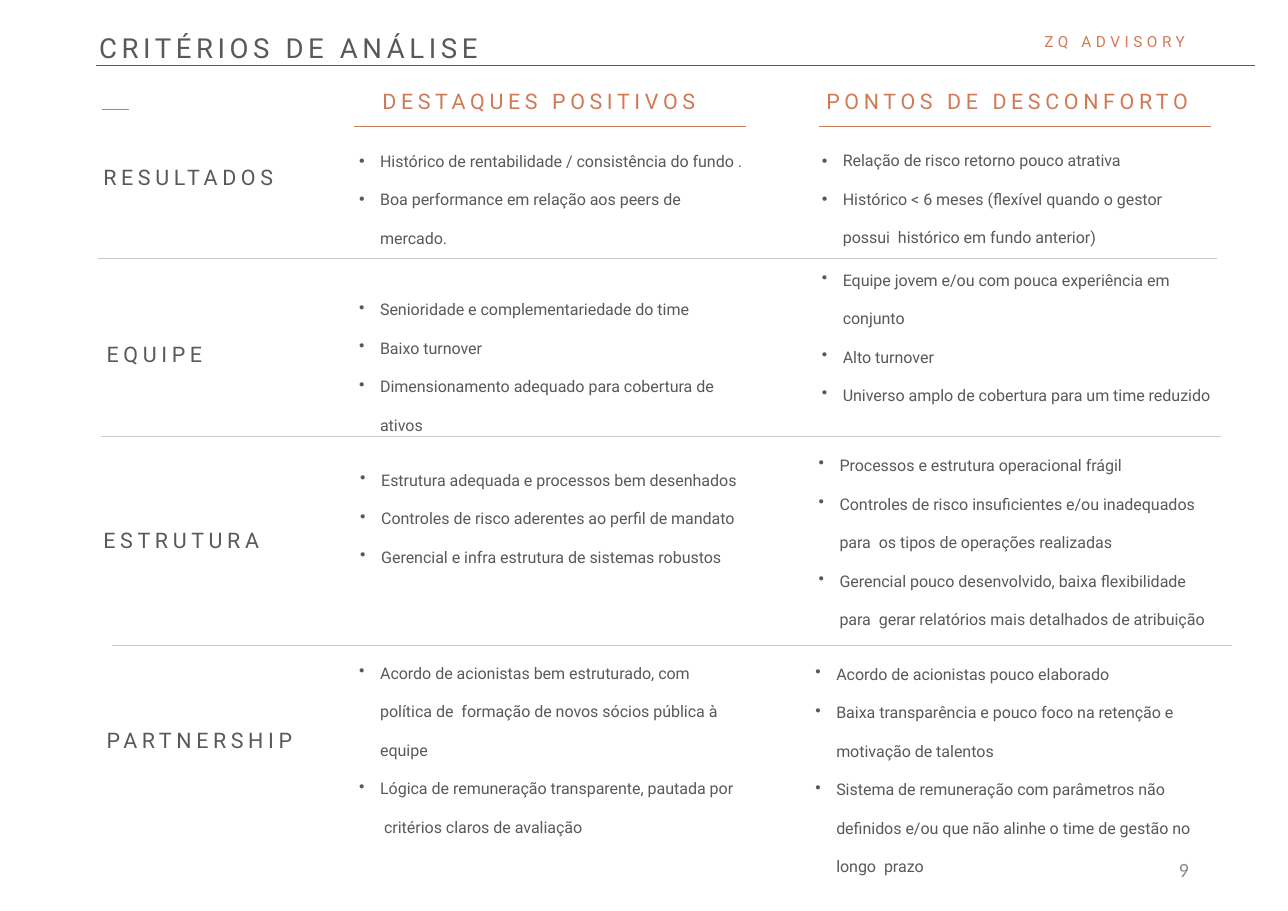
"""Build the slide of analysis criteria on a grid of tenth-of-an-inch cells."""
from dataclasses import dataclass
from typing import Optional

from lxml.etree import SubElement
from pptx import Presentation
from pptx.dml.color import RGBColor
from pptx.enum.shapes import MSO_CONNECTOR
from pptx.enum.text import MSO_ANCHOR, MSO_AUTO_SIZE, PP_ALIGN
from pptx.oxml.ns import qn
from pptx.slide import Slide
from pptx.text.text import TextFrame
from pptx.util import Emu, Inches, Pt

CELL = Inches(0.1)
COLS, ROWS = 116.9, 82.7
INDENT = 1.9
LABEL_ROWS = 3.4

GREY = RGBColor(0x58, 0x59, 0x5B)
ORANGE = RGBColor(0xD1, 0x79, 0x55)
COPPER = RGBColor(0xC5, 0x7D, 0x5C)
SILVER = RGBColor(0xC8, 0xC9, 0xC9)
PAGE_GREY = RGBColor(0x8C, 0x8C, 0x8C)


@dataclass(frozen=True)
class Style:
    """Look of a text and of its frame."""
    size: float
    color: RGBColor
    tracking: int = 0
    leading: float = 1.0
    font: str = "Roboto"
    bullet: bool = False
    inset: bool = False
    wrap: bool = True
    grow: bool = False
    anchor: MSO_ANCHOR = MSO_ANCHOR.TOP
    align: PP_ALIGN = PP_ALIGN.LEFT


@dataclass(frozen=True)
class Block:
    """Text placed on the grid, in a placeholder when a slot is given."""
    col: float
    row: float
    cols: float
    rows: float
    lines: tuple[str, ...]
    style: Style
    slot: Optional[int] = None


@dataclass(frozen=True)
class Rule:
    """Horizontal line on the grid."""
    col: float
    row: float
    cols: float
    color: RGBColor
    width: float = 0.5


TITLE = Style(18, GREY, 300, 2.0, grow=True)
BRAND = Style(10, ORANGE, 300, 2.0, grow=True)
HEADING = Style(14, ORANGE, 300, inset=True, wrap=False, grow=True)
LABEL = Style(14, GREY, 300, inset=True, wrap=False, grow=True)
LIST = Style(10.5, GREY, leading=2.0, bullet=True, anchor=MSO_ANCHOR.MIDDLE)
PAGE = Style(13.2, PAGE_GREY, font="Calibri", inset=True,
             anchor=MSO_ANCHOR.MIDDLE, align=PP_ALIGN.RIGHT)

BLOCKS = (
    Block(9, -0.2, 76.8, 5.1, ("CRITÉRIOS DE ANÁLISE",), TITLE, 0),
    Block(94.8, 1.3, 14.6, 3.4, ("ZQ ADVISORY",), BRAND),
    Block(33.7, 7.5, 33.1, LABEL_ROWS, ("DESTAQUES POSITIVOS",), HEADING, 1),
    Block(74, 7.5, 38.1, LABEL_ROWS, ("PONTOS DE DESCONFORTO",), HEADING, 3),
    Block(8.4, 14.4, 19.3, LABEL_ROWS, ("RESULTADOS",), LABEL),
    Block(32.6, 14.4, 35.1, 5.6, (
        "Histórico de rentabilidade / consistência do fundo .",
        "Boa performance em relação aos peers de mercado.",
    ), LIST, 2),
    Block(74.6, 13.3, 34.3, 7.8, (
        "Relação de risco retorno pouco atrativa",
        "Histórico < 6 meses (flexível quando o gestor possui  histórico em fundo anterior)",
    ), LIST, 4),
    Block(8.7, 30.5, 12, LABEL_ROWS, ("EQUIPE",), LABEL),
    Block(32.6, 28, 33.7, 8.9, (
        "Senioridade e complementariedade do time",
        "Baixo turnover",
        "Dimensionamento adequado para cobertura de ativos",
    ), LIST),
    Block(74.6, 25.3, 37.3, 8.9, (
        "Equipe jovem e/ou com pouca experiência em conjunto",
        "Alto turnover",
        "Universo amplo de cobertura para um time reduzido",
    ), LIST),
    Block(8.4, 47.4, 17.8, LABEL_ROWS, ("ESTRUTURA",), LABEL),
    Block(32.7, 41.9, 35, 8.6, (
        "Estrutura adequada e processos bem desenhados",
        "Controles de risco aderentes ao perﬁl de mandato",
        "Gerencial e infra estrutura de sistemas robustos",
    ), LIST),
    Block(74.3, 41, 35.6, 14.7, (
        "Processos e estrutura operacional frágil",
        "Controles de risco insuﬁcientes e/ou inadequados para  os tipos de operações realizadas",
        "Gerencial pouco desenvolvido, baixa flexibilidade para  gerar relatórios mais "
        "detalhados de atribuição",
    ), LIST),
    Block(8.7, 65.5, 20.5, LABEL_ROWS, ("PARTNERSHIP",), LABEL),
    Block(32.6, 62, 34.2, 10.4, (
        "Acordo de acionistas bem estruturado, com política de  formação de novos sócios "
        "pública à equipe",
        "Lógica de remuneração transparente, pautada por  critérios claros de avaliação",
    ), LIST),
    Block(74, 62.5, 36.8, 13.1, (
        "Acordo de acionistas pouco elaborado",
        "Baixa transparência e pouco foco na retenção e  motivação de talentos",
        "Sistema de remuneração com parâmetros não  deﬁnidos e/ou que não alinhe o time de "
        "gestão no longo  prazo",
    ), LIST),
    Block(82.6, 76.7, 26.3, 4.4, ("9",), PAGE),
)

RULES = (
    Rule(8.7, 5.9, 105.2, GREY),
    Rule(9.3, 9.9, 2.4, COPPER),
    Rule(32.1, 11.5, 35.6, COPPER, 1),
    Rule(74.3, 11.5, 35.6, COPPER, 1),
    Rule(8.9, 23.5, 101.6, SILVER),
    Rule(9.2, 39.6, 101.6, SILVER),
    Rule(10.2, 58.6, 101.6, SILVER),
)


def grid(cells: float) -> Emu:
    """Turn a count of grid cells into a length."""
    return Emu(round(cells * CELL))


def write(tf: TextFrame, lines: tuple[str, ...], style: Style) -> None:
    """Fill a text frame with one paragraph per line."""
    tf.word_wrap = style.wrap
    tf.auto_size = MSO_AUTO_SIZE.SHAPE_TO_FIT_TEXT if style.grow else MSO_AUTO_SIZE.NONE
    tf.vertical_anchor = style.anchor
    tf.margin_left = tf.margin_right = grid(1 if style.inset else 0)
    tf.margin_top = tf.margin_bottom = grid(0.5 if style.inset else 0)
    for i, line in enumerate(lines):
        p = tf.add_paragraph() if i else tf.paragraphs[0]
        p.alignment = style.align
        p.line_spacing = style.leading
        p.space_before = p.space_after = Pt(0)
        if style.bullet:
            pPr = p._p.get_or_add_pPr()
            pPr.set("marL", str(grid(INDENT)))
            pPr.set("indent", str(-grid(INDENT)))
            SubElement(pPr, qn("a:buChar")).set("char", "•")
        r = p.add_run()
        r.text = line
        r.font.name = style.font
        r.font.size = Pt(style.size)
        r.font.bold = False
        r.font.color.rgb = style.color
        if style.tracking:
            r._r.get_or_add_rPr().set("spc", str(style.tracking))


def draw_block(s: Slide, block: Block) -> None:
    """Place a block in its placeholder or in a new text box."""
    box = [grid(n) for n in (block.col, block.row, block.cols, block.rows)]
    if block.slot is None:
        sp = s.shapes.add_textbox(*box)
    else:
        sp = next(ph for ph in s.placeholders if ph.placeholder_format.idx == block.slot)
        sp.left, sp.top, sp.width, sp.height = box
    write(sp.text_frame, block.lines, block.style)


def draw_rule(s: Slide, rule: Rule) -> None:
    """Draw a horizontal line without a shadow."""
    y = grid(rule.row)
    cxn = s.shapes.add_connector(
        MSO_CONNECTOR.STRAIGHT, grid(rule.col), y, grid(rule.col + rule.cols), y)
    cxn.line.color.rgb = rule.color
    cxn.line.width = Pt(rule.width)
    SubElement(cxn._element.spPr, qn("a:effectLst"))


def main() -> None:
    """Build and save the slide."""
    prs = Presentation()
    prs.slide_width, prs.slide_height = grid(COLS), grid(ROWS)
    s = prs.slides.add_slide(prs.slide_layouts.get_by_name("Comparison"))
    for rule in RULES:
        draw_rule(s, rule)
    for block in BLOCKS:
        draw_block(s, block)
    prs.save("out.pptx")


if __name__ == "__main__":
    main()
